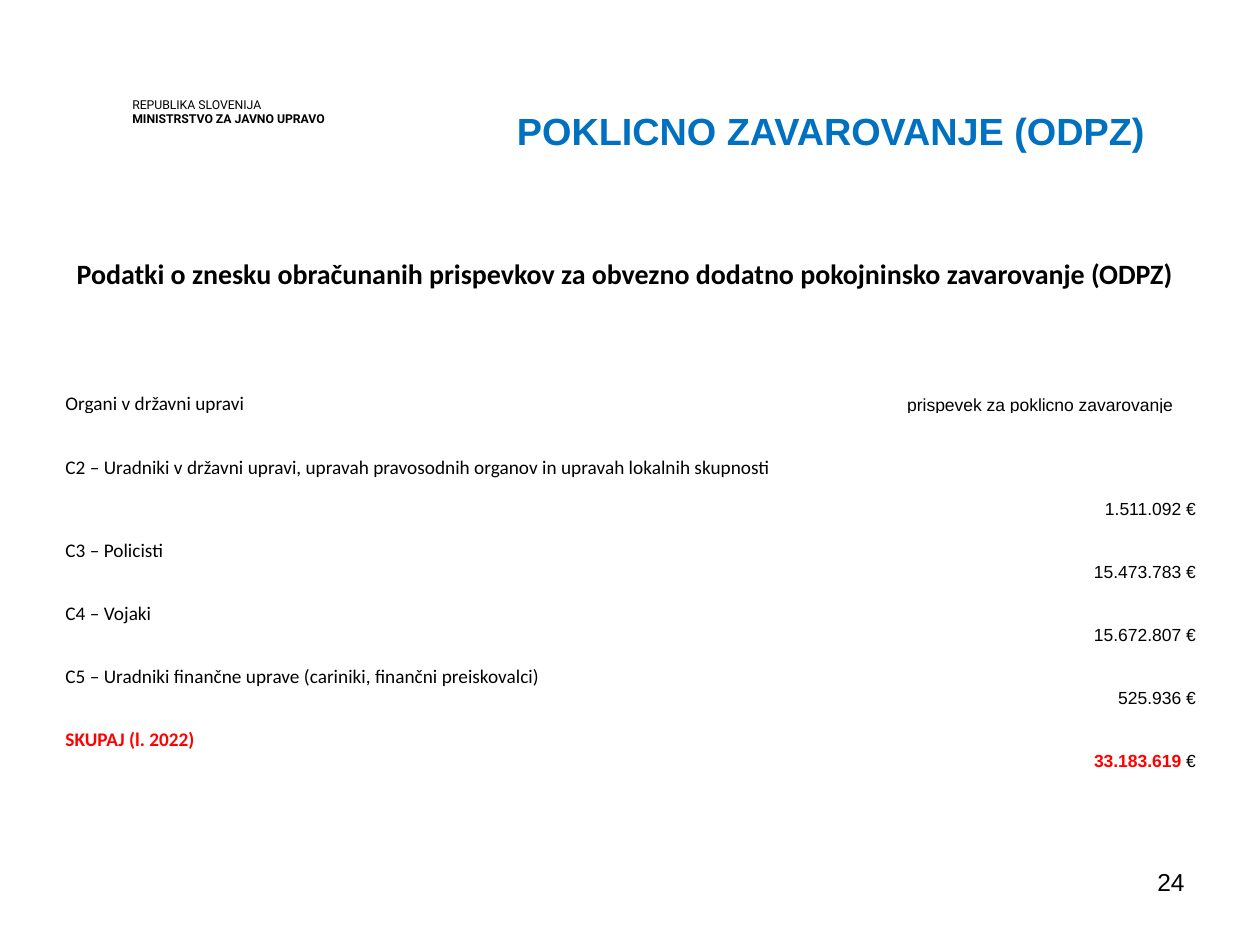
from lxml import etree
from pptx import Presentation
from pptx.dml.color import RGBColor
from pptx.enum.text import MSO_ANCHOR, PP_ALIGN
from pptx.oxml.ns import qn
from pptx.util import Inches, Pt

LEFT, CENTER, RIGHT = PP_ALIGN.LEFT, PP_ALIGN.CENTER, PP_ALIGN.RIGHT
TOP, MIDDLE, BOTTOM = MSO_ANCHOR.TOP, MSO_ANCHOR.MIDDLE, MSO_ANCHOR.BOTTOM
BLACK, WHITE, RED, BLUE = "000000", "FFFFFF", "FF0000", "0070C0"

COLUMN_WIDTHS = [6.68, 2.31]
ROW_HEIGHTS = [0.89, 0.82, 0.5, 0.5, 0.5, 0.5]
HEADINGS = ("Organi v državni upravi", "prispevek za poklicno zavarovanje")
CONTRIBUTIONS = [
    ("C2 – Uradniki v državni upravi, upravah pravosodnih organov in upravah lokalnih skupnosti",
     "1.511.092"),
    ("C3 – Policisti", "15.473.783"),
    ("C4 – Vojaki", "15.672.807"),
    ("C5 – Uradniki finančne uprave (cariniki, finančni preiskovalci)", "525.936"),
]
TOTAL = ("SKUPAJ (l. 2022)", "33.183.619")


def rgb(color):
    return RGBColor.from_string(color)


def add_run(p, text, size, font, color=BLACK, bold=False):
    r = p.add_run()
    r.text = text
    r.font.size = Pt(size)
    r.font.name = font
    r.font.bold = bold
    r.font.color.rgb = rgb(color)


def add_text_box(slide, box, inset=None):
    tf = slide.shapes.add_textbox(*map(Inches, box)).text_frame
    tf.word_wrap = True
    if inset is not None:
        tf.margin_left = tf.margin_right = Inches(inset)
        tf.margin_top = tf.margin_bottom = Inches(inset)
    return tf


def add_ministry(slide, box):
    tf = add_text_box(slide, box, inset=0)
    first = tf.paragraphs[0]
    add_run(first, "REPUBLIKA SLOVENIJA", 7, "Roboto")
    second = tf.add_paragraph()
    add_run(second, "MINISTRSTVO ZA JAVNO UPRAVO", 7, "Roboto", bold=True)
    for p in (first, second):
        p.line_spacing = Pt(8.4)


def set_title(slide, box):
    title = slide.shapes.title
    title.left, title.top, title.width, title.height = map(Inches, box)
    tf = title.text_frame
    tf.word_wrap = True
    tf.vertical_anchor = MIDDLE
    tf.margin_left, tf.margin_top = Inches(0.36), Inches(0.19)
    p = tf.paragraphs[0]
    p.alignment = CENTER
    p.line_spacing = 0.9
    add_run(p, "POKLICNO ZAVAROVANJE (ODPZ)", 21.6, "Arial", BLUE, True)


def add_subtitle(slide, box):
    p = add_text_box(slide, box).paragraphs[0]
    add_run(p, "Podatki o znesku obračunanih prispevkov za obvezno dodatno "
               "pokojninsko zavarovanje (ODPZ)", 16, "Calibri", bold=True)


def set_borders(cell, bottom):
    """Draw white borders, 1 pt wide except for the bottom one."""
    tcPr = cell._tc.get_or_add_tcPr()
    widths = {"a:lnL": 1, "a:lnR": 1, "a:lnT": 1, "a:lnB": bottom}
    for tag, width in widths.items():
        ln = etree.SubElement(tcPr, qn(tag), w=str(Pt(width)))
        fill = etree.SubElement(ln, qn("a:solidFill"))
        etree.SubElement(fill, qn("a:srgbClr"), val=WHITE)


def format_cell(cell, anchor, align=LEFT, bottom=1):
    """Prepare a cell and return its paragraph."""
    cell.margin_left = cell.margin_right = cell.margin_top = Inches(0.01)
    cell.margin_bottom = 0
    cell.vertical_anchor = anchor
    set_borders(cell, bottom)
    cell.fill.background()
    p = cell.text_frame.paragraphs[0]
    p.alignment = align
    return p


def add_contributions(slide, box):
    table = slide.shapes.add_table(
        len(ROW_HEIGHTS), len(COLUMN_WIDTHS), *map(Inches, box)).table
    table.first_row = table.horz_banding = False
    for column, width in zip(table.columns, COLUMN_WIDTHS):
        column.width = Inches(width)
    for row, height in zip(table.rows, ROW_HEIGHTS):
        row.height = Inches(height)

    fonts = [(11, "Calibri"), (10, "Arial")]
    for i, (heading, font) in enumerate(zip(HEADINGS, fonts)):
        add_run(format_cell(table.cell(0, i), BOTTOM, bottom=3), heading, *font)

    for i, (group, amount) in enumerate(CONTRIBUTIONS + [TOTAL], 1):
        is_total = i > len(CONTRIBUTIONS)
        color = RED if is_total else BLACK
        p = format_cell(table.cell(i, 0), MIDDLE)
        add_run(p, group, *fonts[0], color, is_total)
        p = format_cell(table.cell(i, 1), BOTTOM, RIGHT)
        if is_total:
            add_run(p, amount + " ", *fonts[1], color, True)
            add_run(p, "€", *fonts[1])
        else:
            add_run(p, amount + " €", *fonts[1])


def add_page_number(slide, box):
    tf = add_text_box(slide, box)
    tf.vertical_anchor = TOP
    p = tf.paragraphs[0]
    p.alignment = RIGHT
    p.space_after = Pt(6)
    add_run(p, "24", 14, "Arial")


def main():
    prs = Presentation()
    prs.slide_width, prs.slide_height = Inches(10), Inches(7.5)
    slide = prs.slides.add_slide(prs.slide_layouts[5])
    add_ministry(slide, (1.05, 0.77, 2.12, 0.23))
    set_title(slide, (3.43, 0.68, 6.07, 0.61))
    add_subtitle(slide, (0.51, 1.99, 8.99, 0.37))
    add_contributions(slide, (0.51, 2.41, sum(COLUMN_WIDTHS), sum(ROW_HEIGHTS)))
    add_page_number(slide, (7.17, 6.83, 2.33, 0.52))
    prs.save("out.pptx")


if __name__ == "__main__":
    main()
